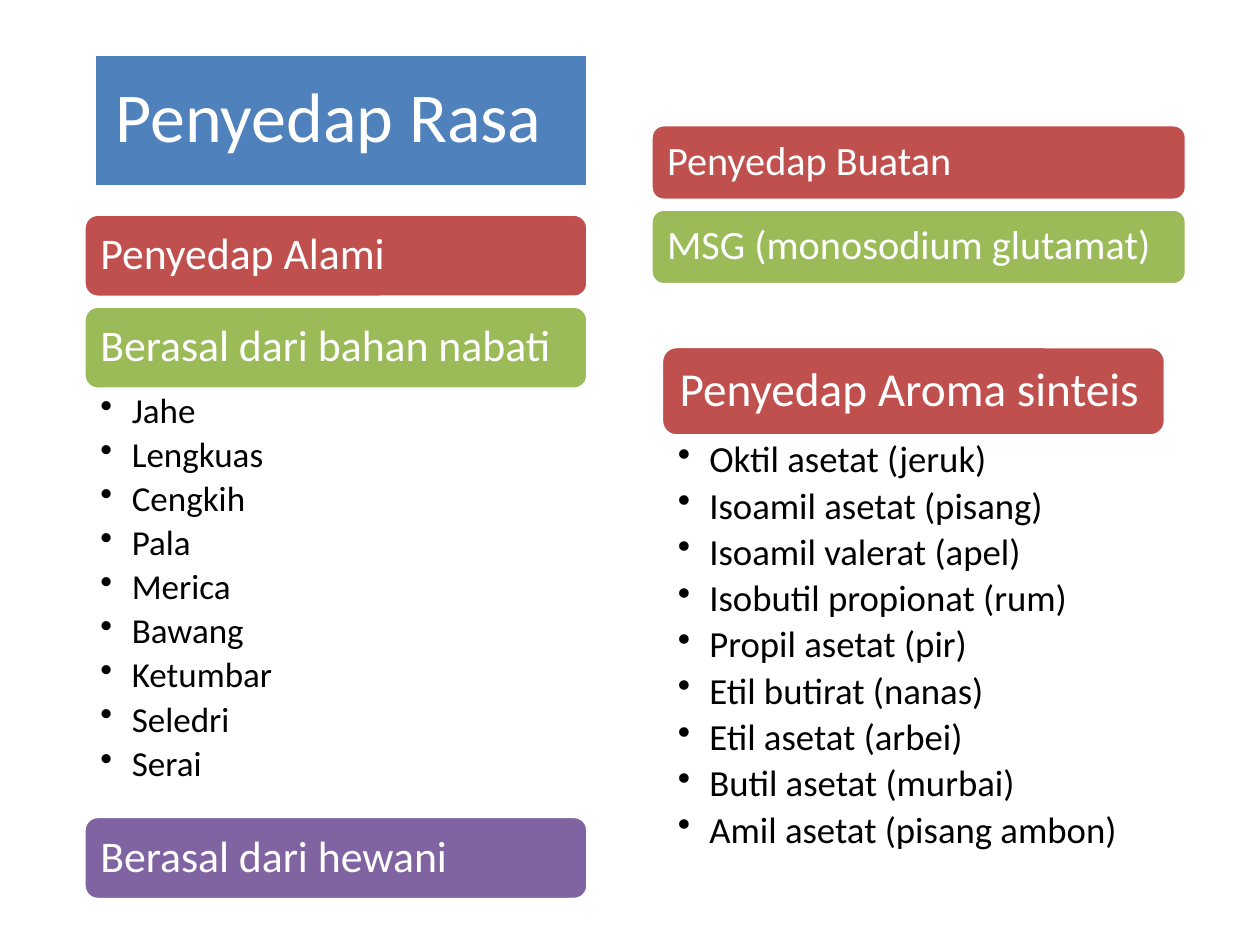
from dataclasses import dataclass

from lxml import etree
from pptx import Presentation
from pptx import util as u
from pptx.dml.color import RGBColor
from pptx.enum import shapes, text
from pptx.oxml.ns import qn

WIDTH, HEIGHT = u.Inches(10), u.Inches(7.5)
COLUMNS, ROWS = 120, 750
WHITE, BLACK = RGBColor(255, 255, 255), RGBColor(0, 0, 0)
BLUE = RGBColor(0x4F, 0x81, 0xBD)
RED = RGBColor(0xC0, 0x50, 0x4D)
GREEN = RGBColor(0x9B, 0xBB, 0x59)
PURPLE = RGBColor(0x80, 0x64, 0xA2)


@dataclass(frozen=True)
class Area:
    column: int
    row: int
    columns: int
    rows: int

    def bounds(self) -> dict:
        return {
            "left": WIDTH * self.column // COLUMNS,
            "top": HEIGHT * self.row // ROWS,
            "width": WIDTH * self.columns // COLUMNS,
            "height": HEIGHT * self.rows // ROWS,
        }


@dataclass(frozen=True)
class Banner:
    wording: str
    area: Area
    color: RGBColor
    size: int
    inset: float


@dataclass(frozen=True)
class Examples:
    names: tuple
    area: Area
    size: int
    top_inset: float


HEADING = Banner("Penyedap Rasa", Area(9, 43, 47, 105), BLUE, 40, 0.17)
BANNERS = (
    Banner("Penyedap Alami", Area(8, 170, 48, 66), RED, 25, 0.1),
    Banner("Berasal dari bahan nabati", Area(8, 243, 48, 66), GREEN, 25, 0.1),
    Banner("Berasal dari hewani", Area(8, 648, 48, 66), PURPLE, 25, 0.1),
    Banner("Penyedap Buatan", Area(62, 99, 51, 60), RED, 23, 0.1),
    Banner("MSG (monosodium glutamat)", Area(62, 166, 51, 60), GREEN, 23, 0.1),
    Banner("Penyedap Aroma sinteis", Area(63, 275, 48, 71), RED, 27, 0.11),
)
EXAMPLES = (
    Examples(
        ("Jahe", "Lengkuas", "Cengkih", "Pala", "Merica", "Bawang",
         "Ketumbar", "Seledri", "Serai"),
        Area(8, 309, 48, 340), 20, 0.03,
    ),
    Examples(
        ("Oktil asetat (jeruk)", "Isoamil asetat (pisang)",
         "Isoamil valerat (apel)", "Isobutil propionat (rum)",
         "Propil asetat (pir)", "Etil butirat (nanas)", "Etil asetat (arbei)",
         "Butil asetat (murbai)", "Amil asetat (pisang ambon)"),
        Area(63, 346, 48, 355), 21, 0.04,
    ),
)


def apply(target, values: dict) -> None:
    for attribute, value in values.items():
        setattr(target, attribute, value)


def write(paragraph, wording: str, size: int, color: RGBColor) -> None:
    apply(paragraph, {"alignment": text.PP_ALIGN.LEFT, "line_spacing": 0.9})
    run = paragraph.add_run()
    run.text = wording
    apply(run.font, {"name": "Calibri", "size": u.Pt(size)})
    run.font.color.rgb = color


def format_banner(label, banner: Banner) -> None:
    label.fill.solid()
    label.fill.fore_color.rgb = banner.color
    label.line.color.rgb = WHITE
    label.line.width = u.Pt(2)
    inset = u.Inches(banner.inset)
    apply(label.text_frame, {
        "word_wrap": True,
        "auto_size": text.MSO_AUTO_SIZE.NONE,
        "vertical_anchor": text.MSO_ANCHOR.MIDDLE,
        "margin_left": inset, "margin_right": inset,
        "margin_top": inset, "margin_bottom": inset,
    })
    write(label.text_frame.paragraphs[0], banner.wording, banner.size, WHITE)


def draw_heading(slide, banner: Banner) -> None:
    heading = slide.shapes.title
    apply(heading, banner.area.bounds())
    outline = etree.SubElement(heading._element.spPr, qn("a:prstGeom"), prst="roundRect")
    etree.SubElement(outline, qn("a:avLst"))
    format_banner(heading, banner)


def draw_banner(slide, banner: Banner) -> None:
    label = slide.shapes.add_shape(
        shapes.MSO_SHAPE.ROUNDED_RECTANGLE, **banner.area.bounds())
    label.shadow.inherit = False
    format_banner(label, banner)


def draw_examples(slide, examples: Examples) -> None:
    frame = slide.shapes.add_textbox(**examples.area.bounds()).text_frame
    apply(frame, {
        "word_wrap": True,
        "margin_left": u.Inches(0.13), "margin_right": u.Inches(0.2),
        "margin_top": u.Inches(examples.top_inset),
        "margin_bottom": u.Inches(examples.top_inset),
    })
    for index, name in enumerate(examples.names):
        paragraph = frame.add_paragraph() if index else frame.paragraphs[0]
        write(paragraph, name, examples.size, BLACK)
        paragraph.level = 1
        paragraph.space_after = u.Pt(0.18 * examples.size)
        properties = paragraph._p.get_or_add_pPr()
        indent = u.Inches(0.25)
        properties.set("marL", str(indent))
        properties.set("indent", str(-indent))
        etree.SubElement(properties, qn("a:buChar"), char="•")


def main() -> None:
    deck = Presentation()
    apply(deck, {"slide_width": WIDTH, "slide_height": HEIGHT})
    slide = deck.slides.add_slide(deck.slide_layouts[5])
    draw_heading(slide, HEADING)
    for banner in BANNERS:
        draw_banner(slide, banner)
    for examples in EXAMPLES:
        draw_examples(slide, examples)
    deck.save("out.pptx")


if __name__ == "__main__":
    main()
